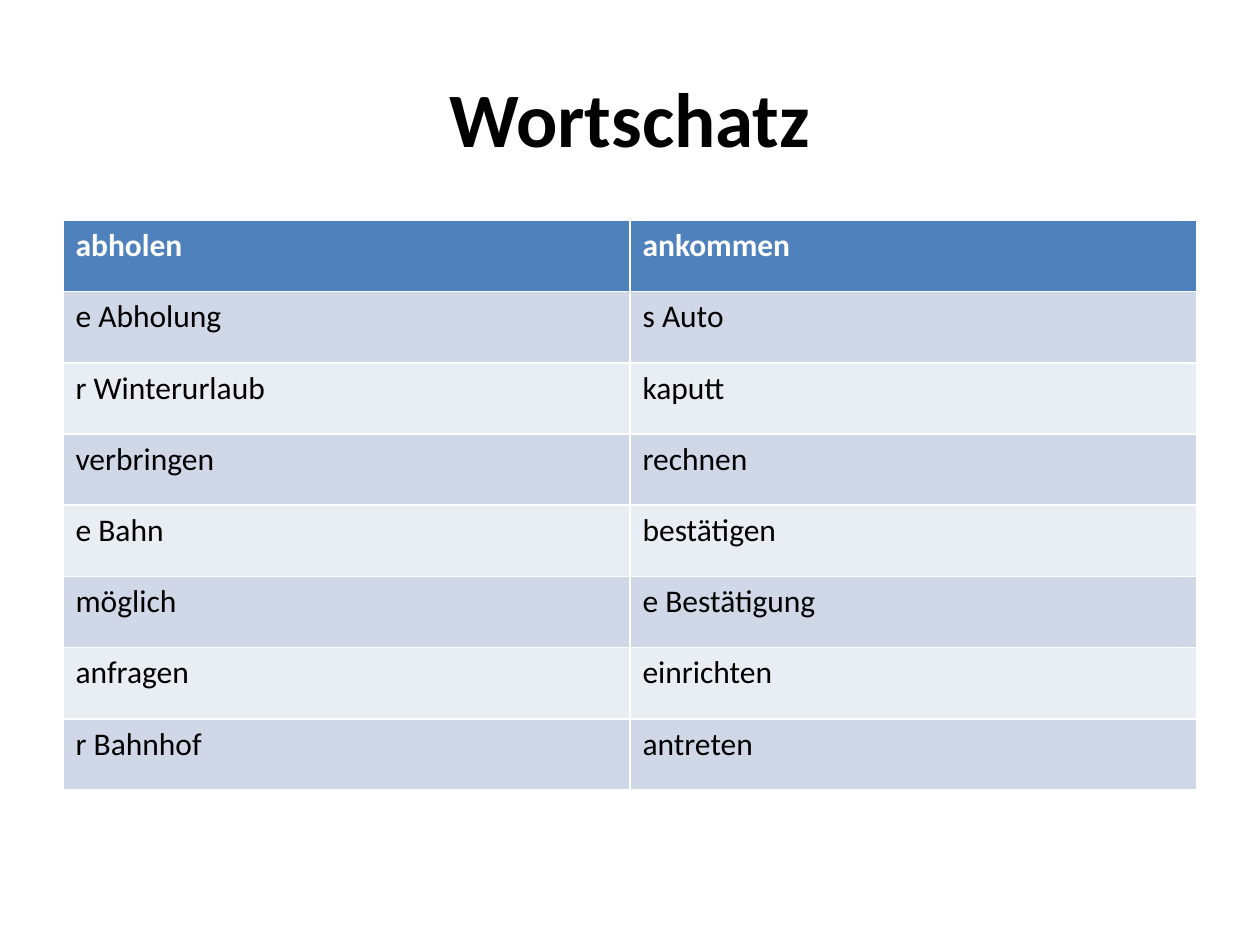
from pptx import Presentation
from pptx.dml.color import RGBColor
from pptx.enum.text import MSO_ANCHOR, PP_ALIGN
from pptx.util import Inches, Pt

BLACK = RGBColor(0x00, 0x00, 0x00)
WHITE = RGBColor(0xFF, 0xFF, 0xFF)
HEADER_BLUE = RGBColor(0x4F, 0x81, 0xBD)
BANDS = [RGBColor(0xE9, 0xED, 0xF4), RGBColor(0xD0, 0xD8, 0xE8)]

VOCABULARY = [
    ("abholen", "ankommen"),
    ("e Abholung", "s Auto"),
    ("r Winterurlaub", "kaputt"),
    ("verbringen", "rechnen"),
    ("e Bahn", "bestätigen"),
    ("möglich", "e Bestätigung"),
    ("anfragen", "einrichten"),
    ("r Bahnhof", "antreten"),
]


def write(frame, text, size, color, bold):
    para = frame.paragraphs[0]
    para.text = text
    para.font.name = "Calibri"
    para.font.size = Pt(size)
    para.font.bold = bold
    para.font.color.rgb = color
    return para


deck = Presentation()
deck.slide_width = Inches(10)
deck.slide_height = Inches(7.5)
page = deck.slides.add_slide(deck.slide_layouts[6])

margin = int(deck.slide_width * 0.05)
content_width = deck.slide_width - 2 * margin

title = page.shapes.add_textbox(
    margin, int(deck.slide_height * 0.04), content_width, Inches(1.25)
)
title.text_frame.word_wrap = True
title.text_frame.vertical_anchor = MSO_ANCHOR.MIDDLE
write(title.text_frame, "Wortschatz", 44, BLACK, True).alignment = PP_ALIGN.CENTER

table = page.shapes.add_table(
    len(VOCABULARY), len(VOCABULARY[0]), margin, Inches(1.75), content_width, Inches(4.52)
).table

for row, words in enumerate(VOCABULARY):
    is_header = row == 0
    for column, word in enumerate(words):
        cell = table.cell(row, column)
        cell.fill.solid()
        cell.fill.fore_color.rgb = HEADER_BLUE if is_header else BANDS[row % 2]
        write(cell.text_frame, word, 18, WHITE if is_header else BLACK, is_header)

deck.save("out.pptx")
